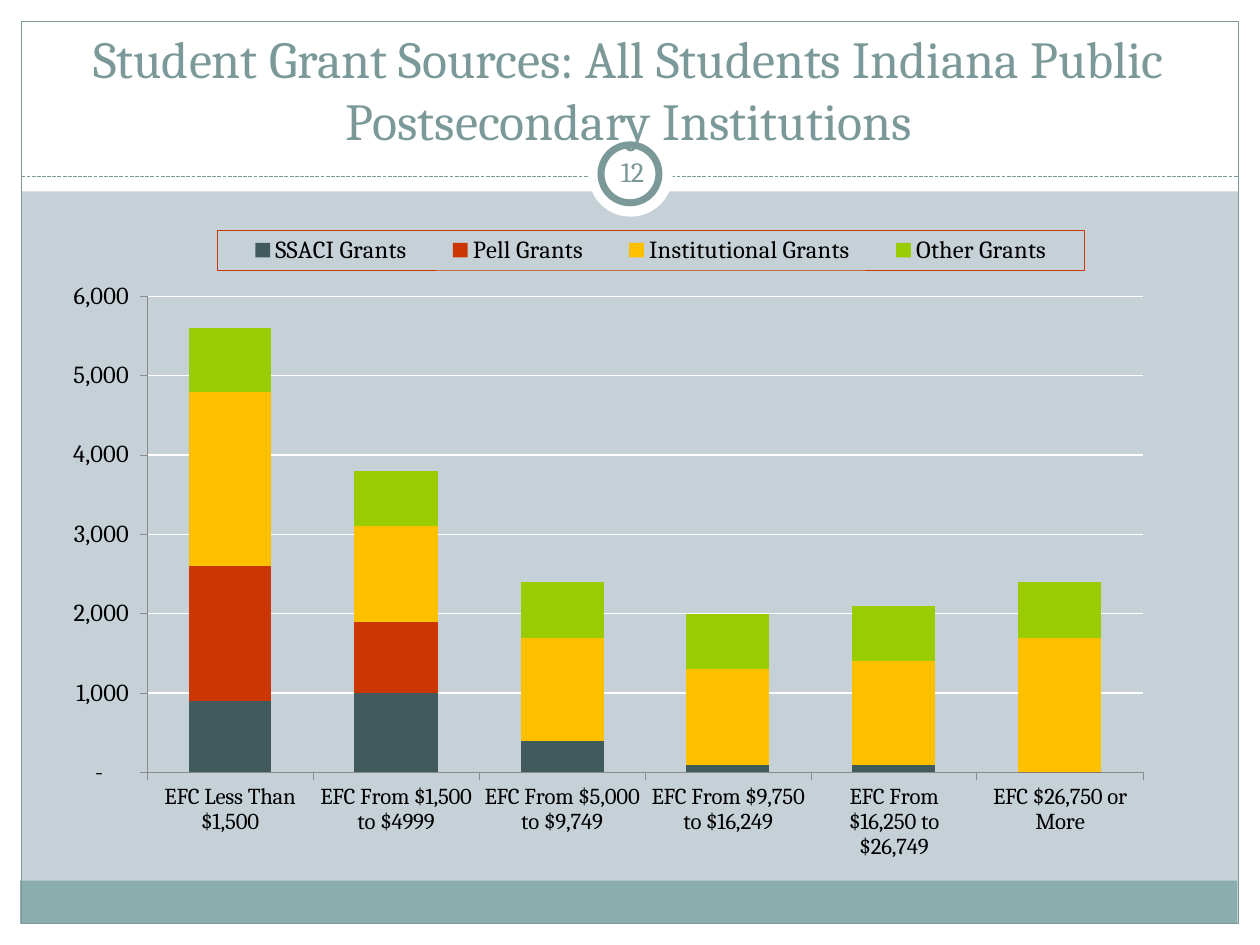
from lxml import etree
from pptx import Presentation
from pptx.chart.data import CategoryChartData
from pptx.dml.color import RGBColor
from pptx.enum.chart import XL_CHART_TYPE, XL_LEGEND_POSITION, XL_TICK_MARK
from pptx.enum.dml import MSO_LINE
from pptx.enum.shapes import MSO_CONNECTOR, MSO_SHAPE
from pptx.enum.text import MSO_ANCHOR, PP_ALIGN
from pptx.oxml.ns import qn
from pptx.util import Inches, Pt

FONT = "Cambria"
WHITE = RGBColor(0xFF, 0xFF, 0xFF)
BLACK = RGBColor(0x00, 0x00, 0x00)
BACKGROUND = RGBColor(0xC5, 0xD1, 0xD7)
TEAL = RGBColor(0x7C, 0x99, 0x9A)
BAND = RGBColor(0x8C, 0xAD, 0xAE)
AXIS = RGBColor(0x8B, 0x8B, 0x8B)
SLATE = RGBColor(0x41, 0x5B, 0x5C)
RED = RGBColor(0xCC, 0x36, 0x03)
YELLOW = RGBColor(0xFF, 0xC0, 0x00)
GREEN = RGBColor(0x99, 0xCC, 0x03)

CATEGORIES = [
    "EFC Less Than $1,500",
    "EFC From $1,500 to $4999",
    "EFC From $5,000 to $9,749",
    "EFC From $9,750 to $16,249",
    "EFC From $16,250 to $26,749",
    "EFC $26,750 or More",
]
SERIES = [
    ("SSACI Grants", [900, 1000, 400, 100, 100, 0], SLATE),
    ("Pell Grants", [1700, 900, 0, 0, 0, 0], RED),
    ("Institutional Grants", [2200, 1200, 1300, 1200, 1300, 1700], YELLOW),
    ("Other Grants", [800, 700, 700, 700, 700, 700], GREEN),
]
NUMBER_FORMAT = '_(* #,##0_);_(* \\(#,##0\\);_(* "-"??_);_(@_)'


def add_panel(slide, box, fill=None, line=None, width=0.75, shape=MSO_SHAPE.RECTANGLE):
    sp = slide.shapes.add_shape(shape, *map(Inches, box))
    sp.shadow.inherit = False
    if fill is None:
        sp.fill.background()
    else:
        sp.fill.solid()
        sp.fill.fore_color.rgb = fill
    if line is None:
        sp.line.fill.background()
    else:
        sp.line.color.rgb = line
        sp.line.width = Pt(width)


def add_divider(slide, left, right, y):
    cxn = slide.shapes.add_connector(
        MSO_CONNECTOR.STRAIGHT, Inches(left), Inches(y), Inches(right), Inches(y))
    cxn.line.color.rgb = TEAL
    cxn.line.width = Pt(0.75)
    cxn.line.dash_style = MSO_LINE.SQUARE_DOT
    etree.SubElement(cxn._element.spPr, qn("a:effectLst"))


def add_text(slide, box, text, size, anchor, inset=None):
    tf = slide.shapes.add_textbox(*map(Inches, box)).text_frame
    tf.word_wrap = True
    tf.vertical_anchor = anchor
    if inset is not None:
        tf.margin_left = tf.margin_right = Inches(inset)
        tf.margin_top = tf.margin_bottom = Inches(inset)
    p = tf.paragraphs[0]
    p.text = text
    p.alignment = PP_ALIGN.CENTER
    p.font.name = FONT
    p.font.size = Pt(size)
    p.font.color.rgb = TEAL


def set_layout(parent, index, box, inner=False):
    for old in parent.findall(qn("c:layout")):
        parent.remove(old)
    layout = etree.Element(qn("c:layout"))
    manual = etree.SubElement(layout, qn("c:manualLayout"))
    settings = [("layoutTarget", "inner")] if inner else []
    settings += [("xMode", "edge"), ("yMode", "edge")]
    settings += zip("xywh", map(str, box))
    for tag, value in settings:
        etree.SubElement(manual, qn(f"c:{tag}")).set("val", value)
    parent.insert(index, layout)


def style_axis(axis, size):
    axis.major_tick_mark = XL_TICK_MARK.OUTSIDE
    axis.minor_tick_mark = XL_TICK_MARK.NONE
    axis.format.line.color.rgb = AXIS
    axis.format.line.width = Pt(0.5)
    axis.tick_labels.font.size = Pt(size)


def style_legend(chart):
    chart.has_legend = True
    legend = chart.legend
    legend.position = XL_LEGEND_POSITION.TOP
    legend.include_in_layout = True
    set_layout(legend._element, 1, (0.15, 0.03, 0.74, 0.06))
    sp_pr = etree.Element(qn("c:spPr"))
    ln = etree.SubElement(sp_pr, qn("a:ln"), w=str(Pt(0.25)))
    fill = etree.SubElement(ln, qn("a:solidFill"))
    etree.SubElement(fill, qn("a:srgbClr"), val=str(RED))
    legend._element.find(qn("c:overlay")).addnext(sp_pr)


def add_grant_chart(slide, box):
    data = CategoryChartData(number_format="#,##0")
    data.categories = CATEGORIES
    for name, values, _ in SERIES:
        data.add_series(name, values)
    chart = slide.shapes.add_chart(
        XL_CHART_TYPE.COLUMN_STACKED, *map(Inches, box), data).chart
    chart.has_title = False
    chart.font.name = FONT
    chart.font.size = Pt(14)
    chart.font.color.rgb = BLACK

    plot = chart.plots[0]
    plot.gap_width = 100
    plot.overlap = 100
    plot.vary_by_categories = False
    for series, (_, _, color) in zip(plot.series, SERIES):
        series.format.fill.solid()
        series.format.fill.fore_color.rgb = color

    style_axis(chart.category_axis, 13)
    axis = chart.value_axis
    style_axis(axis, 14)
    axis.minimum_scale, axis.maximum_scale, axis.major_unit = 0, 6000, 1000
    axis.tick_labels.number_format = NUMBER_FORMAT
    axis.tick_labels.number_format_is_linked = False
    axis.major_gridlines.format.line.color.rgb = WHITE
    axis.major_gridlines.format.line.width = Pt(0.75)

    style_legend(chart)
    plot_area = chart._chartSpace.find(".//" + qn("c:plotArea"))
    set_layout(plot_area, 0, (0.09, 0.13, 0.85, 0.72), inner=True)


def add_frame(slide):
    for box in ((0, 7.33, 10, 0.17), (0, 0, 10, 1.52),
                (0, 0, 0.17, 7.5), (9.83, 0, 0.17, 7.5)):
        add_panel(slide, box, WHITE)
    add_panel(slide, (0.16, 6.99, 9.66, 0.34), BAND)
    add_panel(slide, (0.17, 0.17, 9.66, 7.16), line=TEAL)
    add_divider(slide, 0.17, 9.83, 1.4)
    add_panel(slide, (4.67, 1.05, 0.67, 0.67), WHITE, shape=MSO_SHAPE.OVAL)
    add_panel(slide, (4.77, 1.15, 0.46, 0.46), WHITE, TEAL, 4, MSO_SHAPE.OVAL)


def main():
    prs = Presentation()
    prs.slide_width, prs.slide_height = Inches(10), Inches(7.5)
    slide = prs.slides.add_slide(prs.slide_layouts[6])
    slide.background.fill.solid()
    slide.background.fill.fore_color.rgb = BACKGROUND
    add_frame(slide)
    add_text(slide, (0.33, 0.42, 9.33, 0.83),
             "Student Grant Sources: All Students Indiana Public "
             "Postsecondary Institutions", 29.7, MSO_ANCHOR.BOTTOM)
    add_text(slide, (4.77, 1.12, 0.5, 0.48), "12", 16, MSO_ANCHOR.MIDDLE, 0.05)
    add_grant_chart(slide, (0.33, 1.67, 9.3, 5.25))
    prs.save("out.pptx")


if __name__ == "__main__":
    main()
